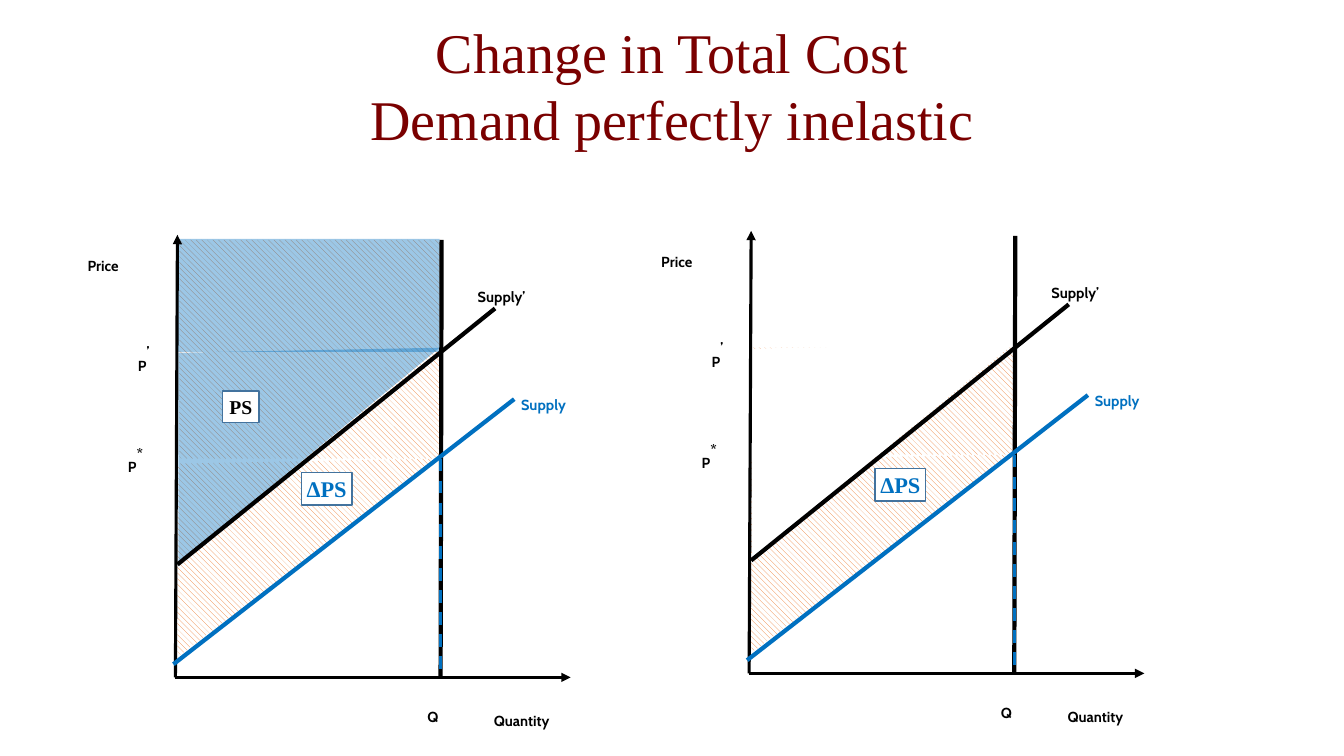
from lxml import etree
from pptx import Presentation
from pptx.dml.color import RGBColor
from pptx.enum.dml import MSO_LINE, MSO_PATTERN
from pptx.enum.shapes import MSO_CONNECTOR, MSO_SHAPE
from pptx.enum.text import MSO_ANCHOR, MSO_AUTO_SIZE, PP_ALIGN
from pptx.oxml.ns import qn
from pptx.util import Inches, Pt

BLACK = RGBColor(0x00, 0x00, 0x00)
WHITE = RGBColor(0xFF, 0xFF, 0xFF)
BLUE = RGBColor(0x00, 0x70, 0xC0)
ORANGE = RGBColor(0xED, 0x7D, 0x31)
BOX_EDGE = RGBColor(0x43, 0x73, 0x9E)
DARK_RED = RGBColor(0x7A, 0x00, 0x00)
STRAIGHT = MSO_CONNECTOR.STRAIGHT
RECTANGLE = MSO_SHAPE.RECTANGLE
HATCH = MSO_PATTERN.WIDE_DOWNWARD_DIAGONAL
DASH = MSO_LINE.DASH
MIDDLE = MSO_ANCHOR.MIDDLE
CENTER = PP_ALIGN.CENTER
GROW = MSO_AUTO_SIZE.SHAPE_TO_FIT_TEXT
SUBSCRIPT, SUPERSCRIPT = "-25000", "30000"
SERIF, SANS = "Times New Roman", "Cabin"

# Coordinates belong to the left diagram; the right one is shifted.
# Areas from back to front: hatched or not, corner points
AREAS = [
    (True, [(1.76, 4.6), (4.37, 4.55), (1.76, 6.52)]),
    (True, [(1.78, 2.38), (2.6, 2.17)]),
    (False, [(1.77, 3.5), (4.36, 3.45), (1.77, 5.58)]),
    (False, [(1.76, 2.37), (2.6, 1.12)]),
]
# Start, end, colour, width, ends in an arrow, dashed
LINES = [
    ((1.74, 6.72), (1.76, 2.33), BLACK, 2.25, True, False),
    ((1.74, 6.72), (5.66, 6.72), BLACK, 2.25, True, False),
    ((4.38, 2.38), (4.37, 6.71), BLACK, 3, False, False),
    ((4.37, 4.55), (4.37, 6.71), BLUE, 2.25, False, True),
    ((4.91, 3.06), (1.76, 5.6), BLACK, 3, False, False),
    ((5.1, 3.96), (1.72, 6.59), BLUE, 3, False, False),
]
# Left, top, width, text, raised mark, colour
LABELS = [
    (1.27, 3.32, 0.5, "P", "’", BLACK),
    (0.77, 2.33, 0.84, "Price", "", BLACK),
    (4.14, 6.81, 0.5, "Q", "", BLACK),
    (4.64, 2.64, 1.37, "Supply’", "", BLACK),
    (5.07, 3.71, 1.21, "Supply", "", BLUE),
    (1.17, 4.33, 0.5, "P", "*", BLACK),
    (4.8, 6.85, 1.4, "Quantity", "", BLACK),
]
DELTA_BOX = (2.99, 4.69, 0.5, 0.32, "ΔPS", 16, BLUE)
SURPLUS_BOX = (2.21, 3.88, 0.36, 0.31, "PS", 14, BLACK)
# Shift right, shift down, colour over the hatching, opacity, boxes
DIAGRAMS = [
    (0, 0, BLUE, 39, [DELTA_BOX, SURPLUS_BOX]),
    (5.69, -0.04, WHITE, 100, [DELTA_BOX]),
]


def style(paragraph, name, size, color, bold):
    font = paragraph.font
    font.name, font.size, font.bold = name, Pt(size), bold
    font.color.rgb = color


prs = Presentation()
prs.slide_width, prs.slide_height = Inches(13.33), Inches(7.5)
slide = prs.slides.add_slide(prs.slide_layouts[6])
shapes = slide.shapes

title = shapes.add_textbox(Inches(3.64), Inches(0.12), Inches(6.05), Inches(1.44)).text_frame
title.word_wrap = False
title.vertical_anchor = MIDDLE
title.margin_left = title.margin_right = 0
title.text = "Change in Total Cost\nDemand perfectly inelastic"
for paragraph in title.paragraphs:
    paragraph.alignment = CENTER
    style(paragraph, SERIF, 40, DARK_RED, False)

for dx, dy, cover, opacity, boxes in DIAGRAMS:
    for hatched, points in AREAS:
        corners = [(Inches(x + dx), Inches(y + dy)) for x, y in points]
        if len(points) == 3:
            outline = shapes.build_freeform(*corners[0], scale=1.0)
            outline.add_line_segments(corners[1:], close=True)
            area = outline.convert_to_shape()
        else:
            width, height = points[1]
            area = shapes.add_shape(RECTANGLE, *corners[0], Inches(width), Inches(height))
        area.shadow.inherit = False
        area.line.fill.background()
        if hatched:
            area.fill.patterned()
            area.fill.pattern = HATCH
            area.fill.fore_color.rgb = ORANGE
            area.fill.back_color.rgb = WHITE
        else:
            area.fill.solid()
            area.fill.fore_color.rgb = cover
            if opacity < 100:
                tint = area._element.spPr.find(qn("a:solidFill"))[0]
                etree.SubElement(tint, qn("a:alpha"), val=str(opacity * 1000))

    for (x1, y1), (x2, y2), color, width, arrow, dashed in LINES:
        curve = shapes.add_connector(STRAIGHT, Inches(x1 + dx), Inches(y1 + dy),
                                     Inches(x2 + dx), Inches(y2 + dy))
        curve.line.color.rgb = color
        curve.line.width = Pt(width)
        if dashed:
            curve.line.dash_style = DASH
        if arrow:
            etree.SubElement(curve.line._get_or_add_ln(), qn("a:tailEnd"), type="triangle")
        etree.SubElement(curve._element.spPr, qn("a:effectLst"))

    for left, top, width, text, mark, color in LABELS:
        label = shapes.add_textbox(Inches(left + dx), Inches(top + dy),
                                   Inches(width), Inches(0.4)).text_frame
        label.word_wrap = True
        label.auto_size = GROW
        paragraph = label.paragraphs[0]
        style(paragraph, SANS, 18, color, True)
        for part, baseline in ((text, SUBSCRIPT), (mark, SUPERSCRIPT)):
            if part:
                run = paragraph.add_run()
                run.text = part
                run._r.get_or_add_rPr().set("baseline", baseline)

    for left, top, width, height, text, size, color in boxes:
        box = shapes.add_shape(RECTANGLE, Inches(left + dx), Inches(top + dy),
                               Inches(width), Inches(height))
        box.shadow.inherit = False
        box.fill.solid()
        box.fill.fore_color.rgb = WHITE
        box.line.color.rgb = BOX_EDGE
        box.line.width = Pt(1)
        frame = box.text_frame
        frame.margin_left = frame.margin_right = frame.margin_top = frame.margin_bottom = 0
        frame.vertical_anchor = MIDDLE
        frame.text = text
        frame.paragraphs[0].alignment = CENTER
        style(frame.paragraphs[0], SERIF, size, color, True)

prs.save("out.pptx")
